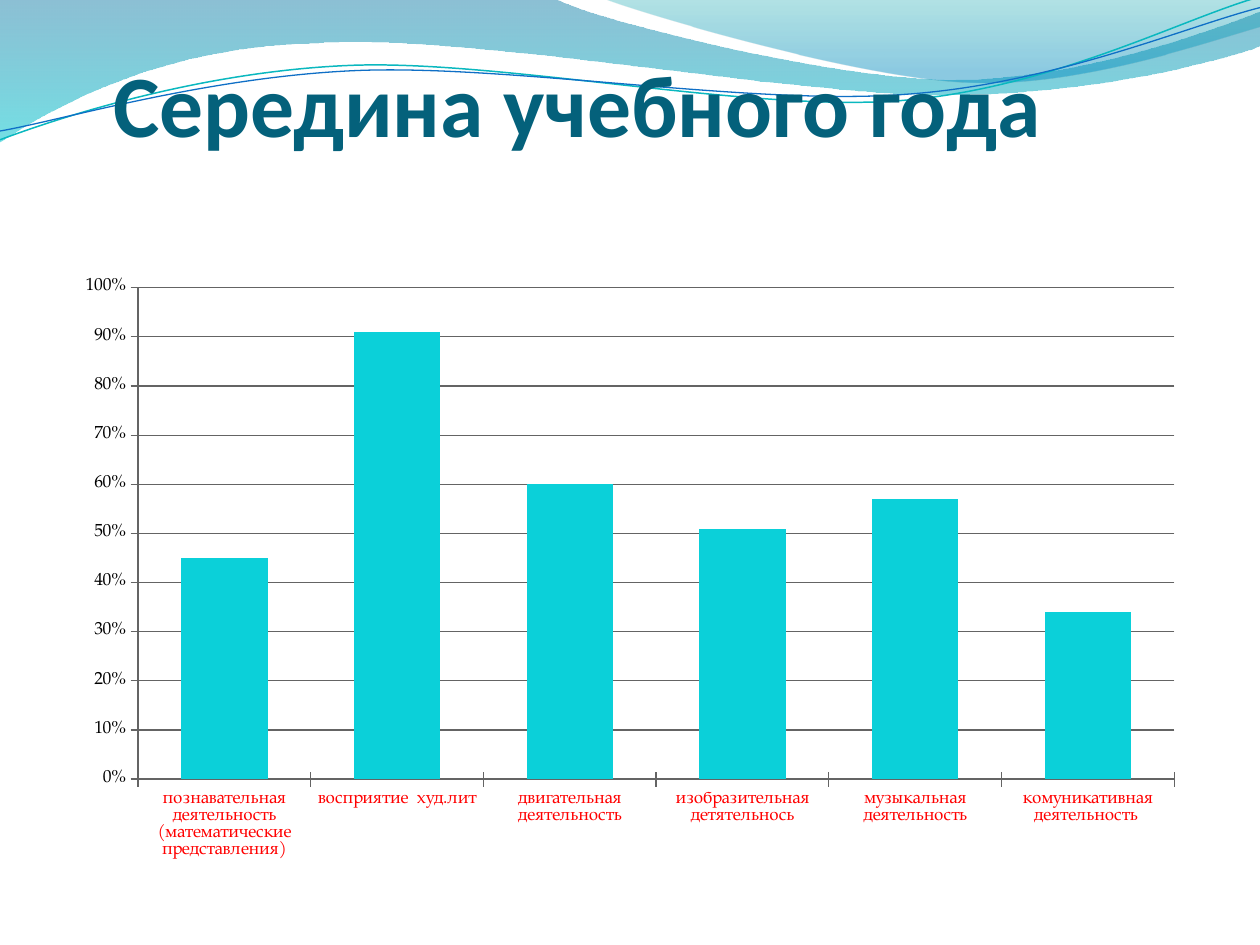
"""Build a slide with a wave banner, a title and a column chart of activity levels."""
from dataclasses import dataclass
from math import cos, radians, sin

from lxml.etree import SubElement
from pptx import Presentation
from pptx.chart.data import CategoryChartData
from pptx.dml.color import RGBColor
from pptx.enum.chart import XL_CHART_TYPE, XL_TICK_MARK
from pptx.enum.text import MSO_ANCHOR, PP_ALIGN
from pptx.oxml.ns import qn
from pptx.util import Emu, Pt

PX = 9144
COLORS = {
    "title": "04617B",
    "bar": "0BD0D9",
    "label": "FF0000",
    "value": "000000",
    "grid": "646464",
    "deep": "0074A1",
    "aqua": "00C6CF",
    "teal": "00A1A9",
    "sky": "008BBF",
    "teal_line": "0AB8BF",
    "blue_line": "0F6FC6",
}
LEVELS = {
    "познавательная деятельность (математические представления)": 0.45,
    "восприятие  худ.лит": 0.91,
    "двигательная деятельность": 0.6,
    "изобразительная детятельнось": 0.51,
    "музыкальная деятельность": 0.57,
    "комуникативная деятельность ": 0.34,
}


@dataclass(frozen=True)
class Stop:
    """A gradient stop; position and opacity are percentages."""
    position: int
    color: str
    opacity: int


@dataclass(frozen=True)
class Wave:
    """An outline of points (2 numbers) and cubic curves (6 numbers), in px on the page."""
    box: tuple
    start: tuple
    segments: tuple
    stops: tuple = ()
    line: str = ""
    width: float = 0
    rotation: float = 0


WAVES = (
    Wave((-1, -1, 1002, 114), (0, 0), (
        (440, -1), (476, 17, 664, 63, 758, 63), (853, 63, 958, 26, 1000, 9),
        (1001, 36), (983, 44, 870, 76, 746, 75), (622, 75, 382, 28, 257, 34),
        (129, 36, 46, 83, -1, 113),
    ), stops=(Stop(0, "deep", 45), Stop(100, "aqua", 55))),
    Wave((479, -1, 521, 70), (479, -1), (
        (509, 11, 682, 62, 769, 65), (856, 69, 961, 32, 1000, 21), (1000, 0),
    ), stops=(Stop(0, "teal", 30), Stop(80, "sky", 45))),
    Wave((-2, 22, 1002, 71), (0, 111), (
        (48, 93, 158, 57, 277, 52), (395, 47, 593, 89, 713, 80),
        (833, 71, 938, 15, 998, -2),
    ), line="teal_line", width=0.85, rotation=357.3),
    Wave((-2, 30, 1003, 58), (0, 104), (
        (47, 96, 164, 61, 283, 56), (403, 51, 597, 84, 717, 75),
        (836, 67, 941, 21, 1000, 6),
    ), line="blue_line", width=0.75, rotation=357.3),
)


def rgb(name: str) -> RGBColor:
    """Look up a named colour."""
    return RGBColor.from_string(COLORS[name])


def apply_format(target, values: dict) -> None:
    """Set every attribute in values on the target."""
    for name, value in values.items():
        setattr(target, name, value)


def local_point(wave: Wave, x: float, y: float) -> dict:
    """Turn a page point into EMU within the wave's unrotated box."""
    left, top, width, height = wave.box
    turn = radians(-wave.rotation)
    across, down = x - left - width / 2, y - top - height / 2
    local_x = across * cos(turn) - down * sin(turn) + width / 2
    local_y = across * sin(turn) + down * cos(turn) + height / 2
    return {"x": str(round(local_x * PX)), "y": str(round(local_y * PX))}


def bend(shape, wave: Wave) -> None:
    """Fit the outline to the wave's box and turn its lines into curves."""
    names = ("left", "top", "width", "height")
    apply_format(shape, {name: Emu(n * PX) for name, n in zip(names, wave.box)})
    shape.rotation = wave.rotation
    outline = next(shape._element.spPr.iter(qn("a:path")))
    outline.set("w", str(shape.width))
    outline.set("h", str(shape.height))
    for command, numbers in zip(list(outline), (wave.start, *wave.segments)):
        if len(numbers) == 6:
            command.tag = qn("a:cubicBezTo")
        for point in list(command):
            command.remove(point)
        for x, y in zip(numbers[::2], numbers[1::2]):
            SubElement(command, qn("a:pt"), local_point(wave, x, y))


def draw_wave(page, wave: Wave) -> None:
    """Draw a gradient band or a thin line."""
    builder = page.shapes.build_freeform(*wave.start, scale=PX)
    ends = [segment[-2:] for segment in wave.segments]
    builder.add_line_segments(ends, close=bool(wave.stops))
    shape = builder.convert_to_shape()
    bend(shape, wave)
    shape.shadow.inherit = False
    if not wave.stops:
        shape.fill.background()
        shape.line.color.rgb = rgb(wave.line)
        shape.line.width = Pt(wave.width)
        return
    shape.line.fill.background()
    shape.fill.gradient()
    shape.fill.gradient_angle = 270
    for target, stop in zip(shape.fill.gradient_stops, wave.stops):
        target.position = stop.position / 100
        target.color.rgb = rgb(stop.color)
    for element, stop in zip(shape._element.spPr.iter(qn("a:srgbClr")), wave.stops):
        SubElement(element, qn("a:alpha")).set("val", str(stop.opacity * 1000))


def draw_title(page, text: str) -> None:
    """Write the slide title."""
    box = page.shapes.add_textbox(*(Emu(n * PX) for n in (50, 30, 817, 93)))
    frame = box.text_frame
    apply_format(frame, {
        "word_wrap": True, "vertical_anchor": MSO_ANCHOR.BOTTOM, "margin_left": 0,
        "margin_top": Emu(5 * PX), "margin_right": 0, "margin_bottom": 0,
    })
    para = frame.paragraphs[0]
    para.alignment = PP_ALIGN.CENTER
    span = para.add_run()
    span.text = text
    apply_format(span.font, {"name": "Calibri", "size": Pt(50), "bold": True})
    span.font.color.rgb = rgb("title")


def draw_chart(page, levels: dict) -> None:
    """Draw the column chart of levels by activity."""
    data = CategoryChartData(number_format="0%")
    data.categories = levels.keys()
    data.add_series("Series 1", levels.values())
    area = (Emu(n * PX) for n in (50, 212, 900, 480))
    chart = page.shapes.add_chart(XL_CHART_TYPE.COLUMN_CLUSTERED, *area, data).chart
    apply_format(chart, {"has_legend": False, "has_title": False})
    apply_format(chart.font, {"name": "TeX Gyre Pagella", "size": Pt(10)})
    chart.font.color.rgb = rgb("value")
    plot = chart.plots[0]
    apply_format(plot, {"gap_width": 100, "vary_by_categories": False})
    bars = plot.series[0].format.fill
    bars.solid()
    bars.fore_color.rgb = rgb("bar")
    apply_format(chart.value_axis, {
        "minimum_scale": 0, "maximum_scale": 1, "major_unit": 0.1,
        "has_major_gridlines": True,
    })
    apply_format(chart.value_axis.tick_labels, {
        "number_format": "0%", "number_format_is_linked": False,
    })
    for axis in (chart.category_axis, chart.value_axis):
        axis.major_tick_mark = XL_TICK_MARK.CROSS
        axis.format.line.color.rgb = rgb("grid")
    chart.category_axis.tick_labels.font.color.rgb = rgb("label")
    chart.value_axis.major_gridlines.format.line.color.rgb = rgb("grid")


def main() -> None:
    """Assemble and save the deck."""
    deck = Presentation()
    apply_format(deck, {"slide_width": Emu(1000 * PX), "slide_height": Emu(750 * PX)})
    page = deck.slides.add_slide(deck.slide_layouts[6])
    for wave in WAVES:
        draw_wave(page, wave)
    draw_title(page, "Середина учебного года")
    draw_chart(page, LEVELS)
    deck.save("out.pptx")


if __name__ == "__main__":
    main()
